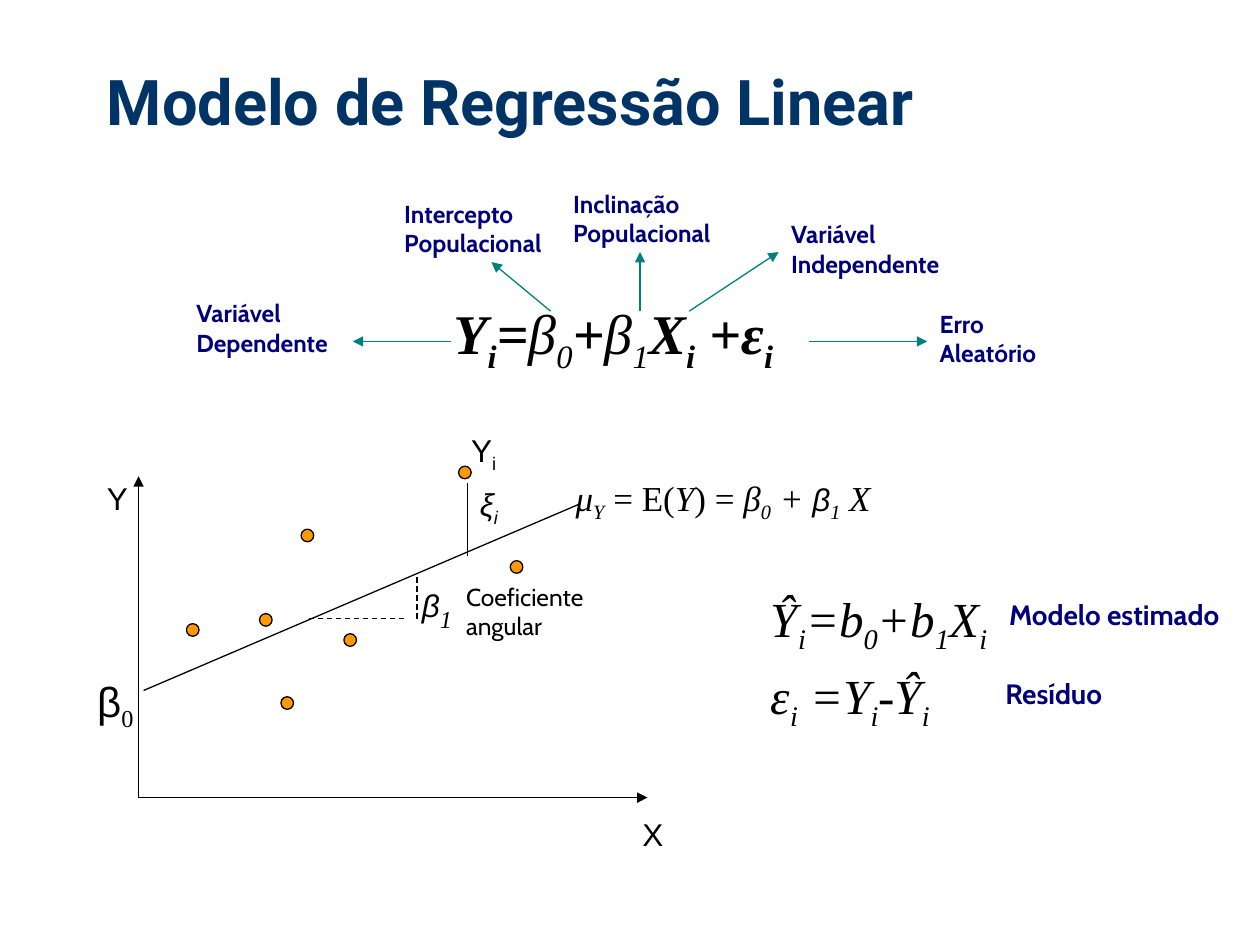
from dataclasses import dataclass
from typing import NamedTuple

import lxml.etree
import pptx
import pptx.dml.color
import pptx.enum.dml
import pptx.enum.shapes
import pptx.enum.text
import pptx.oxml.ns
import pptx.util


@dataclass(frozen=True)
class Theme:
    title: str = "003366"
    label: str = "00007D"
    arrow: str = "008080"
    dot: str = "FF9900"
    ink: str = "000000"
    head: str = "Roboto"
    body: str = "Cabin"
    math: str = "Times New Roman"
    axis: str = "Arial"
    huge: int = 36
    model: int = 32
    fit: int = 28
    large: int = 24
    mean: int = 20
    mark: int = 18
    note: int = 16
    small: int = 14
    thin: float = 0.75


class Box(NamedTuple):
    col: float
    row: float
    cols: float
    rows: float


class Run(NamedTuple):
    text: str  # "_" lowers the next letter
    bold: bool | None = None
    italic: bool | None = None
    font: str | None = None
    size: int | None = None


class Label(NamedTuple):
    box: Box
    lines: tuple
    size: int
    wrap: bool = False


class Line(NamedTuple):
    start: tuple[float, float]
    end: tuple[float, float]
    color: str
    arrow: bool = False
    dash: bool = False


T = Theme()
COLS, ROWS = 100, 75
deck = pptx.Presentation()
deck.slide_width = pptx.util.Inches(10)
deck.slide_height = pptx.util.Inches(7.5)
slide = deck.slides.add_slide(deck.slide_layouts[6])


def across(col: float) -> int:
    return round(deck.slide_width * col / COLS)


def down(row: float) -> int:
    return round(deck.slide_height * row / ROWS)


def place(box: Box) -> tuple[int, int, int, int]:
    return across(box.col), down(box.row), across(box.cols), down(box.rows)


def paint(code: str) -> pptx.dml.color.RGBColor:
    return pptx.dml.color.RGBColor.from_string(code)


def pick(own, base):
    return base if own is None else own


def write(box: Box, *lines, size: int, font: str = T.math, color: str = T.ink,
          bold: bool = False, italic: bool = False, wrap: bool = False,
          before: float = 0) -> pptx.text.text.TextFrame:
    """Each line is a string, a Run, or a list of both."""
    frame = slide.shapes.add_textbox(*place(box)).text_frame
    frame.word_wrap = wrap
    frame.auto_size = pptx.enum.text.MSO_AUTO_SIZE.SHAPE_TO_FIT_TEXT
    for n, line in enumerate(lines):
        para = frame.add_paragraph() if n else frame.paragraphs[0]
        if before:
            para.space_before = pptx.util.Pt(size * before)
        for item in line if isinstance(line, list) else [line]:
            part = Run(item) if isinstance(item, str) else item
            first, *rest = part.text.split("_")
            bits = [(first, False)]
            for bit in rest:
                bits += [(bit[0], True), (bit[1:], False)]
            for text, low in bits:
                if not text:
                    continue
                run = para.add_run()
                run.text = text
                face = run.font
                face.name = pick(part.font, font)
                face.size = pptx.util.Pt(pick(part.size, size))
                face.bold = pick(part.bold, bold)
                face.italic = pick(part.italic, italic)
                face.color.rgb = paint(color)
                if low:
                    run._r.get_or_add_rPr().set("baseline", "-25000")
    return frame


def draw(line: Line) -> None:
    (x1, y1), (x2, y2) = line.start, line.end
    link = slide.shapes.add_connector(
        pptx.enum.shapes.MSO_CONNECTOR.STRAIGHT,
        across(x1), down(y1), across(x2), down(y2))
    link.line.color.rgb = paint(line.color)
    link.line.width = pptx.util.Pt(T.thin)
    if line.dash:
        link.line.dash_style = pptx.enum.dml.MSO_LINE.DASH
    tag = pptx.oxml.ns.qn
    if line.arrow:
        tip = lxml.etree.SubElement(link.line._get_or_add_ln(), tag("a:tailEnd"))
        tip.set("type", "triangle")
    lxml.etree.SubElement(link._element.spPr, tag("a:effectLst"))


def dot(col: float, row: float) -> None:
    kind = pptx.enum.shapes.MSO_SHAPE.FLOWCHART_CONNECTOR
    shape = slide.shapes.add_shape(kind, *place(Box(col, row, 1, 1)))
    shape.shadow.inherit = False
    shape.fill.solid()
    shape.fill.fore_color.rgb = paint(T.dot)
    shape.line.color.rgb = paint(T.ink)
    shape.line.width = pptx.util.Pt(T.thin)


# Title
title = write(Box(7.5, 4.2, 89.2, 8.3), "Modelo de Regressão Linear",
              size=T.huge, font=T.head, color=T.title, bold=True, wrap=True)
title.auto_size = pptx.enum.text.MSO_AUTO_SIZE.NONE
title.vertical_anchor = pptx.enum.text.MSO_ANCHOR.MIDDLE
title.paragraphs[0].line_spacing = 0.9

# Sample points
for spot in [(20.6, 48.7), (14.8, 49.5), (22.3, 55.3), (23.9, 42),
             (27.3, 50.3), (36.4, 37), (40.5, 44.5)]:
    dot(*spot)

# Axes, fitted line, error, slope, and the arrows around the model
left, floor, mid = 11, 63.3, 27.1
for line in [
    Line((37.1, 38.3), (37.1, 44.1), T.ink),
    Line((11.4, 54.8), (46, 40), T.ink),
    Line((33.1, 49.1), (33.1, 45.8), T.ink, dash=True),
    Line((24.5, 49.1), (32.3, 49.1), T.ink, dash=True),
    Line((left, floor), (51.4, floor), T.ink, arrow=True),
    Line((left, floor), (left, 37.8), T.ink, arrow=True),
    Line((64.2, mid), (73.6, mid), T.arrow, arrow=True),
    Line((35.8, mid), (28, mid), T.arrow, arrow=True),
    Line((54.7, 24.7), (61.8, 20), T.arrow, arrow=True),
    Line((50.8, 24.7), (50.8, 20), T.arrow, arrow=True),
    Line((43.7, 24.7), (39, 20.8), T.arrow, arrow=True),
]:
    draw(line)

# Marks on the graph
write(Box(36.4, 33.7, 4, 4), "Y_i", size=T.mark, font=T.axis)
write(Box(37.1, 38, 3.6, 4), "ξ_i", size=T.mark, font=T.axis, italic=True)
write(Box(50, 64.2, 3.7, 4), "X", size=T.mark, font=T.axis)
write(Box(7.5, 37.5, 3.7, 4), "Y", size=T.mark, font=T.axis)
write(Box(5.9, 53.1, 6.6, 5), [" ", Run("β", font=T.axis), "_0"], size=T.large)
write(Box(32.5, 45.2, 5.3, 5), [Run("β", font=T.axis, size=T.mark), "_1"],
      size=T.large, italic=True)
write(Box(36, 45.7, 11.5, 5.7), "Coeficiente", "angular",
      size=T.small, font=T.body)
write(Box(44.7, 37.3, 37.5, 4.3),
      ["μ_Y", Run(" = E(", italic=False), "Y", Run(") = ", italic=False),
       "β_0 + ", Run("β", font=T.axis, size=T.mark), "_1 X"],
      size=T.mean, italic=True, wrap=True)

# Names of the terms
for label in [
    Label(Box(44.5, 14.5, 14.5, 5.7), ("Inclinação", "Populacional"), T.small),
    Label(Box(31.1, 15.3, 14.5, 5.7), ("Intercepto", "Populacional"), T.small),
    Label(Box(61.8, 16.9, 15.8, 5.7), ("Variável", "Independente"), T.small),
    Label(Box(14.6, 23.2, 13.9, 5.7), ("Variável", "Dependente"), T.small),
    Label(Box(73.6, 24, 11.9, 5.7), ("Erro Aleatório",), T.small, True),
    Label(Box(79.1, 46.9, 22.8, 3.7), ("Modelo estimado",), T.note, True),
    Label(Box(78.8, 53.2, 21.2, 3.7), ("Resíduo",), T.note, True),
]:
    write(label.box, *label.lines, size=label.size, font=T.body,
          color=T.label, bold=True, wrap=label.wrap)

# Model and its estimate
write(Box(35, 23.2, 31.5, 6.3),
      [Run("Y_i=", bold=True), "β_0", Run("+", bold=True), "β_1",
       Run("X_i +ε_i", bold=True)],
      size=T.model, italic=True, wrap=True, before=0.2)
write(Box(60.2, 46.2, 20.5, 11.3), "Ŷ_i=b_0+b_1X_i", "ε_i =Y_i-Ŷ_i",
      size=T.fit, italic=True, wrap=True, before=0.2)

deck.save("out.pptx")
